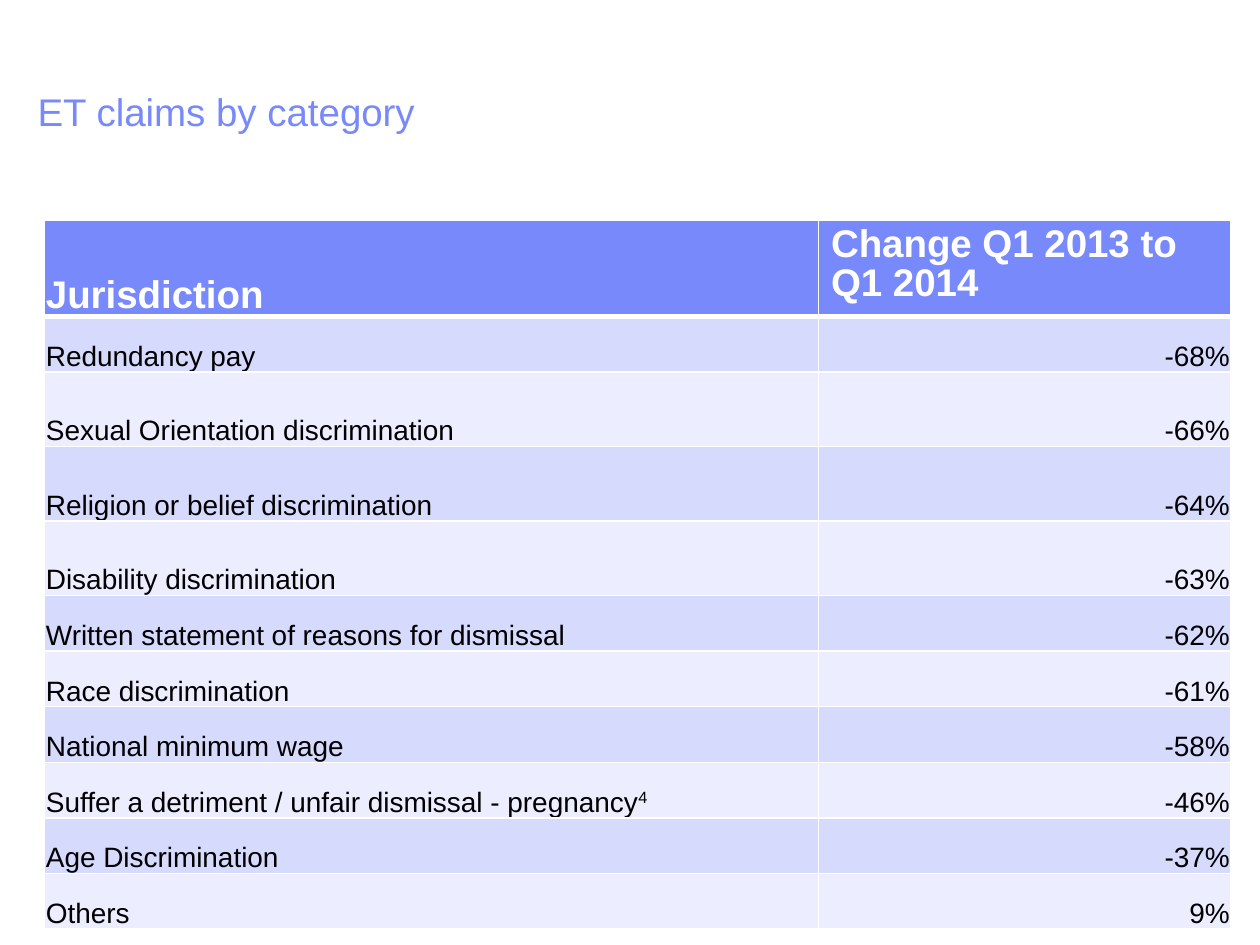
import lxml.etree
import pptx
import pptx.dml.color
import pptx.enum.text
import pptx.oxml.ns
import pptx.util

Pt = pptx.util.Pt
RGBColor = pptx.dml.color.RGBColor
PP_ALIGN = pptx.enum.text.PP_ALIGN
MSO_ANCHOR = pptx.enum.text.MSO_ANCHOR

PERIWINKLE = RGBColor(0x78, 0x89, 0xFB)
DARK_BAND = RGBColor(0xD6, 0xDA, 0xFD)
LIGHT_BAND = RGBColor(0xEC, 0xED, 0xFE)
WHITE = RGBColor(0xFF, 0xFF, 0xFF)
BLACK = RGBColor(0x00, 0x00, 0x00)

HEADINGS = ("Jurisdiction", "Change Q1 2013 to Q1 2014")
CLAIMS = (
    ("Redundancy pay", "-68%"),
    ("Sexual Orientation discrimination", "-66%"),
    ("Religion or belief discrimination", "-64%"),
    ("Disability discrimination", "-63%"),
    ("Written statement of reasons for dismissal", "-62%"),
    ("Race discrimination", "-61%"),
    ("National minimum wage", "-58%"),
    ("Suffer a detriment / unfair dismissal - pregnancy", "-46%"),
    ("Age Discrimination", "-37%"),
    ("Others", "9%"),
)
FOOTNOTES = {"Suffer a detriment / unfair dismissal - pregnancy": "4"}
COLUMN_WIDTHS = (442.2, 235.8)
ROW_HEIGHT = 31.8
TALL_ROW_HEIGHT = 42.6
TALL_ROWS = (2, 3, 4)


def style_paragraph(para, size, color, bold=False):
    """Set the font and line spacing of a paragraph."""
    para.line_spacing = 0.9
    para.font.name = "Arial"
    para.font.size = Pt(size)
    para.font.bold = bold
    para.font.color.rgb = color


def add_title(page, text):
    """Add the slide title."""
    box = page.shapes.add_textbox(Pt(14.4), Pt(49.7), Pt(684), Pt(50.4))
    box.text_frame.word_wrap = True
    para = box.text_frame.paragraphs[0]
    para.text = text
    style_paragraph(para, 22, PERIWINKLE)


def set_borders(cell, top, bottom):
    """Give a cell white borders with the given top and bottom widths."""
    properties = cell._tc.get_or_add_tcPr()
    for side, width in (("L", 1), ("R", 1), ("T", top), ("B", bottom)):
        line = lxml.etree.SubElement(
            properties, pptx.oxml.ns.qn(f"a:ln{side}"), w=str(Pt(width)))
        fill = lxml.etree.SubElement(line, pptx.oxml.ns.qn("a:solidFill"))
        lxml.etree.SubElement(
            fill, pptx.oxml.ns.qn("a:srgbClr"), val=str(WHITE))


def set_fill(cell, color):
    """Fill a cell with one colour."""
    cell.fill.solid()
    cell.fill.fore_color.rgb = color


def sit_on_bottom(cell):
    """Anchor the text of a cell to its bottom with hairline margins."""
    cell.vertical_anchor = MSO_ANCHOR.BOTTOM
    cell.margin_left = cell.margin_right = cell.margin_top = Pt(0.75)
    cell.margin_bottom = Pt(0)


def fill_heading(cell, text):
    """Write a heading cell."""
    set_borders(cell, 1, 3)
    set_fill(cell, PERIWINKLE)
    para = cell.text_frame.paragraphs[0]
    para.text = text
    style_paragraph(para, 22, WHITE, bold=True)


def fill_claim(cell, text, row, align):
    """Write a body cell, with its raised footnote mark if it has one."""
    set_borders(cell, 3 if row == 1 else 1, 1)
    set_fill(cell, DARK_BAND if row % 2 else LIGHT_BAND)
    sit_on_bottom(cell)
    para = cell.text_frame.paragraphs[0]
    para.text = text
    para.alignment = align
    style_paragraph(para, 16, BLACK)
    if text in FOOTNOTES:
        span = para.add_run()
        span.text = FOOTNOTES[text]
        span.font._element.set("baseline", "30000")


def add_claims_table(page):
    """Add the table of claims by category."""
    frame = page.shapes.add_table(
        len(CLAIMS) + 1, 2, Pt(25.5), Pt(126), Pt(678), Pt(401))
    table = frame.table
    for column, width in zip(table.columns, COLUMN_WIDTHS):
        column.width = Pt(width)
    for index, row in enumerate(table.rows):
        row.height = Pt(TALL_ROW_HEIGHT if index in TALL_ROWS else ROW_HEIGHT)
    frame.height = Pt(401)
    for column, heading in enumerate(HEADINGS):
        fill_heading(table.cell(0, column), heading)
    sit_on_bottom(table.cell(0, 0))
    for row, (category, change) in enumerate(CLAIMS, start=1):
        fill_claim(table.cell(row, 0), category, row, PP_ALIGN.LEFT)
        fill_claim(table.cell(row, 1), change, row, PP_ALIGN.RIGHT)


def main():
    """Build the slide and save it."""
    deck = pptx.Presentation()
    deck.slide_width, deck.slide_height = Pt(720), Pt(540)
    page = deck.slides.add_slide(deck.slide_layouts[6])
    add_title(page, "ET claims by category")
    add_claims_table(page)
    deck.save("out.pptx")


if __name__ == "__main__":
    main()
